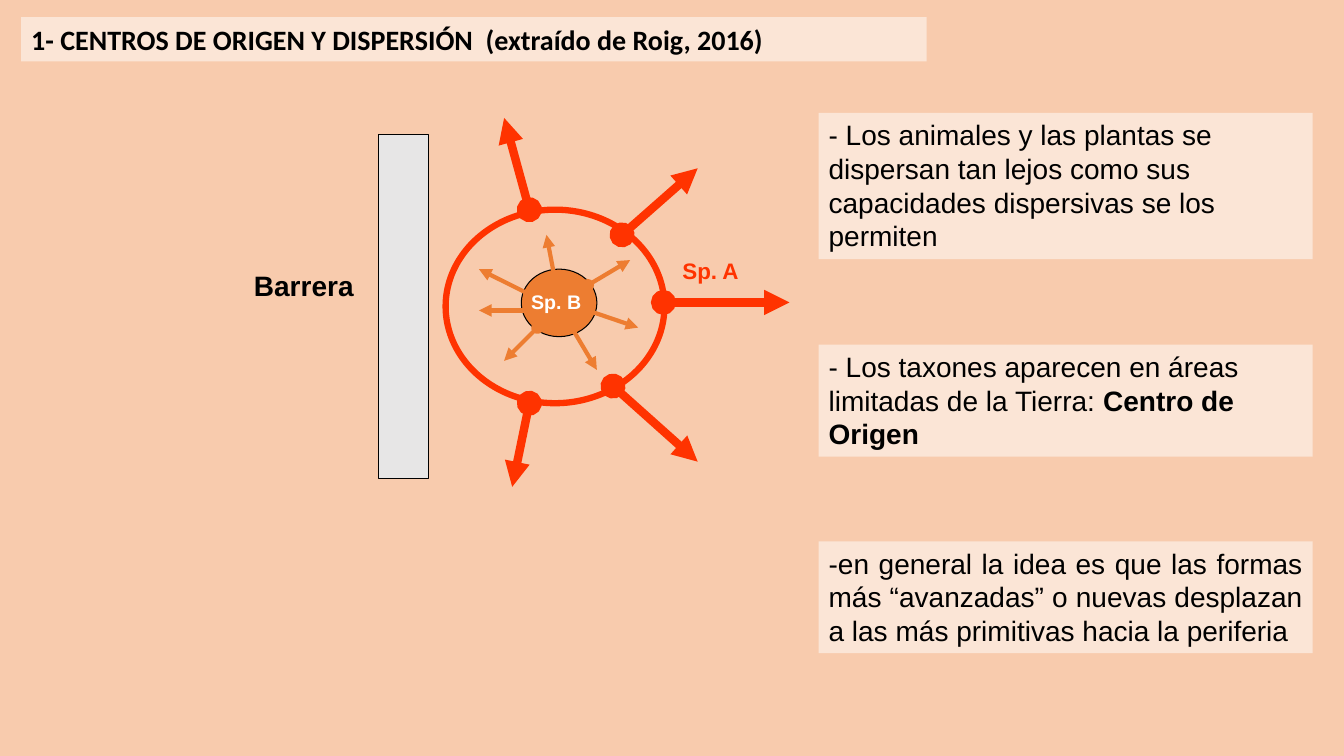
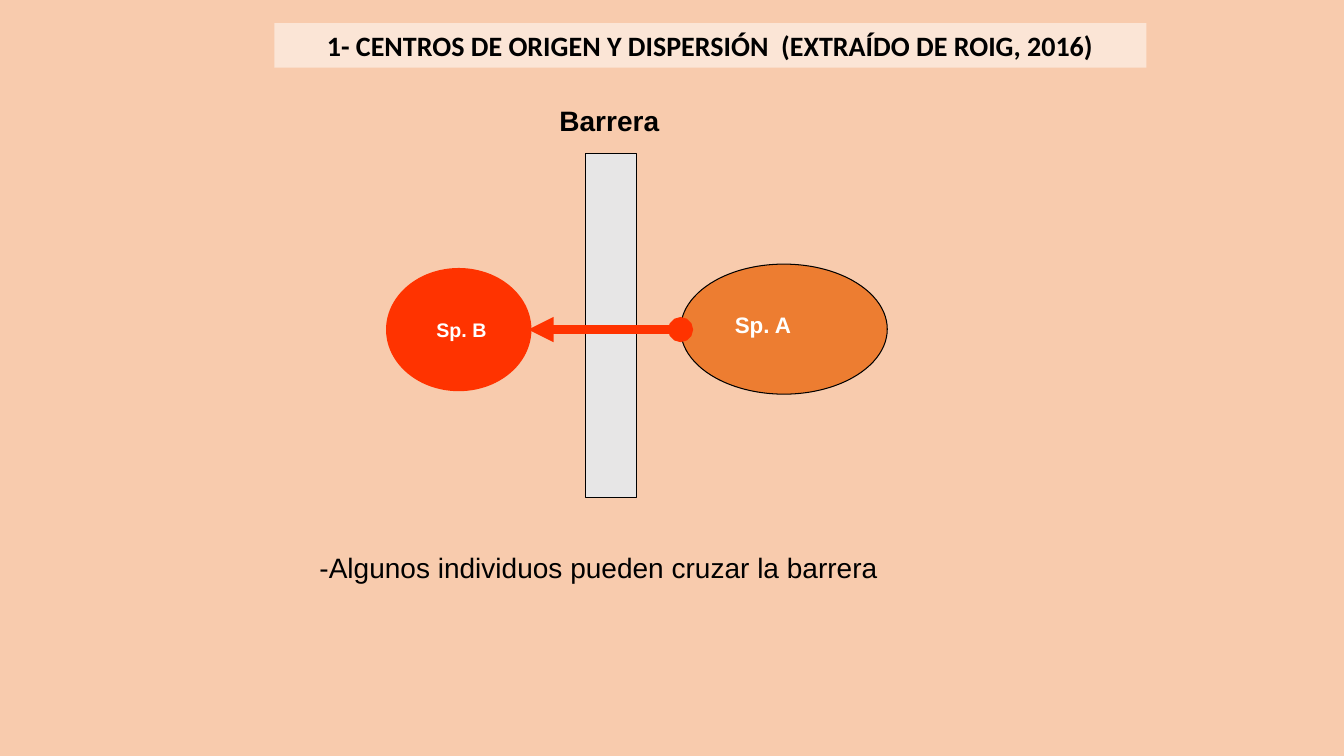
import pptx
import pptx.dml.color
import pptx.enum.shapes
import pptx.enum.text
import pptx.oxml.ns
import pptx.util
import lxml.etree

Inches = pptx.util.Inches
Pt = pptx.util.Pt
ALIGN = pptx.enum.text.PP_ALIGN
SHAPE = pptx.enum.shapes.MSO_SHAPE
qn = pptx.oxml.ns.qn

PEACH, CREAM, GREY = "F8CBAD", "FBE5D6", "E7E6E6"
RED, ORANGE, BLACK, WHITE = "FF3300", "ED7D31", "000000", "FFFFFF"


def rgb(hex_colour):
    return pptx.dml.color.RGBColor.from_string(hex_colour)


def write_paragraph(shape, text, font_name, size, colour, bold, alignment):
    """Fill the shape with one paragraph and return it."""
    frame = shape.text_frame
    frame.word_wrap = True
    frame.auto_size = pptx.enum.text.MSO_AUTO_SIZE.NONE
    frame.vertical_anchor = pptx.enum.text.MSO_ANCHOR.TOP
    paragraph = frame.paragraphs[0]
    paragraph.add_run().text = text
    paragraph.alignment = alignment
    paragraph.font.name = font_name
    paragraph.font.size = Pt(size)
    paragraph.font.bold = bold
    paragraph.font.color.rgb = rgb(colour)
    return paragraph


# shapes: preset, box, fill, line colour, line width
# arrows: start, end, colour, width
# labels: box, text, size, colour, bold
# notes: box, plain text, bold ending, alignment, fill
slides = [
    {
        "title": ("1- CENTROS DE ORIGEN Y DISPERSIÓN  (extraído de Roig, 2016)",
                  (0.21, 0.17, 8.98, 0.44), ALIGN.LEFT),
        "shapes": [
            (SHAPE.OVAL, (4.42, 2.08, 2.17, 1.92), None, RED, 4.5),
            (SHAPE.OVAL, (5.17, 2.67, 0.75, 0.67), ORANGE, BLACK, 0.75),
            (SHAPE.RECTANGLE, (3.75, 1.33, 0.5, 3.42), GREY, BLACK, 0.75),
        ],
        "arrows": [
            ((6.58, 3), (7.83, 3), RED, 6),
            ((6.08, 3.83), (6.92, 4.58), RED, 6),
            ((6.17, 2.33), (6.92, 1.67), RED, 6),
            ((5.25, 2.08), (5, 1.17), RED, 6),
            ((5.25, 4), (5.08, 4.83), RED, 6),
            ((5.83, 2.83), (6.25, 2.58), ORANGE, 3),
            ((5.83, 3.08), (6.33, 3.25), ORANGE, 3),
            ((5.67, 3.25), (5.92, 3.67), ORANGE, 3),
            ((5.33, 3.25), (5, 3.58), ORANGE, 3),
            ((5.5, 2.75), (5.42, 2.33), ORANGE, 3),
            ((5.25, 2.92), (4.75, 2.67), ORANGE, 3),
            ((5.33, 3.08), (4.75, 3.08), ORANGE, 3),
        ],
        "labels": [
            ((2.42, 2.61, 1.33, 0.44), "Barrera", 20, BLACK),
            ((5.17, 2.83, 1.17, 0.33), "Sp. B", 14, WHITE),
            ((6.67, 2.5, 1.17, 0.37), "Sp. A", 16, RED),
        ],
        "notes": [
            ((8.12, 1.12, 4.9, 1.45), "- Los animales y las plantas se dispersan tan lejos "
             "como sus capacidades dispersivas se los permiten", "", ALIGN.LEFT, CREAM),
            ((8.12, 3.42, 4.9, 1.11), "- Los taxones aparecen en áreas limitadas de la Tierra: ",
             "Centro de Origen", ALIGN.LEFT, CREAM),
            ((8.12, 5.37, 4.9, 1.11), "-en general la idea es que las formas más “avanzadas” o "
             "nuevas desplazan a las más primitivas hacia la periferia", "", ALIGN.JUSTIFY, CREAM),
        ],
    },
    {
        "title": ("1- CENTROS DE ORIGEN Y DISPERSIÓN  (EXTRAÍDO DE ROIG, 2016)",
                  (2.72, 0.23, 8.65, 0.44), ALIGN.CENTER),
        "shapes": [
            (SHAPE.OVAL, (3.86, 2.69, 1.38, 1.16), RED, RED, 4.5),
            (SHAPE.OVAL, (6.75, 2.62, 2.05, 1.29), ORANGE, BLACK, 0.75),
            (SHAPE.RECTANGLE, (5.81, 1.52, 0.5, 3.42), GREY, BLACK, 0.75),
        ],
        "arrows": [((6.75, 3.27), (5.24, 3.27), RED, 6)],
        "labels": [
            ((5.45, 0.98, 1.5, 0.44), "Barrera", 20, BLACK),
            ((4.23, 3.1, 1.17, 0.33), "Sp. B", 14, WHITE),
            ((7.19, 3.04, 1.17, 0.37), "Sp. A", 16, WHITE),
        ],
        "notes": [
            ((3.07, 5.41, 6.04, 0.44), "-Algunos individuos pueden cruzar la barrera", "",
             ALIGN.JUSTIFY, None),
        ],
    },
]

presentation = pptx.Presentation()
presentation.slide_width = Inches(13.33)
presentation.slide_height = Inches(7.5)
background = presentation.slide_master.background.fill
background.solid()
background.fore_color.rgb = rgb(PEACH)
title_only = presentation.slide_layouts[5]

for content in slides:
    slide = presentation.slides.add_slide(title_only)

    text, box, alignment = content["title"]
    title = slide.shapes.title
    title.left, title.top, title.width, title.height = map(Inches, box)
    title.fill.solid()
    title.fill.fore_color.rgb = rgb(CREAM)
    write_paragraph(title, text, "Calibri", 20, BLACK, True, alignment)

    for preset, box, fill, line_colour, line_width in content["shapes"]:
        shape = slide.shapes.add_shape(preset, *map(Inches, box))
        shape.shadow.inherit = False
        if fill:
            shape.fill.solid()
            shape.fill.fore_color.rgb = rgb(fill)
        else:
            shape.fill.background()
        shape.line.color.rgb = rgb(line_colour)
        shape.line.width = Pt(line_width)

    for start, end, colour, width in content["arrows"]:
        arrow = slide.shapes.add_connector(
            pptx.enum.shapes.MSO_CONNECTOR.STRAIGHT, *map(Inches, start + end))
        arrow.line.color.rgb = rgb(colour)
        arrow.line.width = Pt(width)
        properties = arrow.element.spPr
        outline = properties.find(qn("a:ln"))
        lxml.etree.SubElement(outline, qn("a:headEnd"), type="oval")
        lxml.etree.SubElement(outline, qn("a:tailEnd"), type="triangle")
        lxml.etree.SubElement(properties, qn("a:effectLst"))

    for box, text, size, colour in content["labels"]:
        label = slide.shapes.add_textbox(*map(Inches, box))
        write_paragraph(label, text, "Arial", size, colour, True, ALIGN.LEFT)

    for box, text, bold_ending, alignment, fill in content["notes"]:
        note = slide.shapes.add_textbox(*map(Inches, box))
        if fill:
            note.fill.solid()
            note.fill.fore_color.rgb = rgb(fill)
        paragraph = write_paragraph(note, text, "Arial", 20, BLACK, False, alignment)
        if bold_ending:
            run = paragraph.add_run()
            run.text = bold_ending
            run.font.bold = True

presentation.save("out.pptx")
